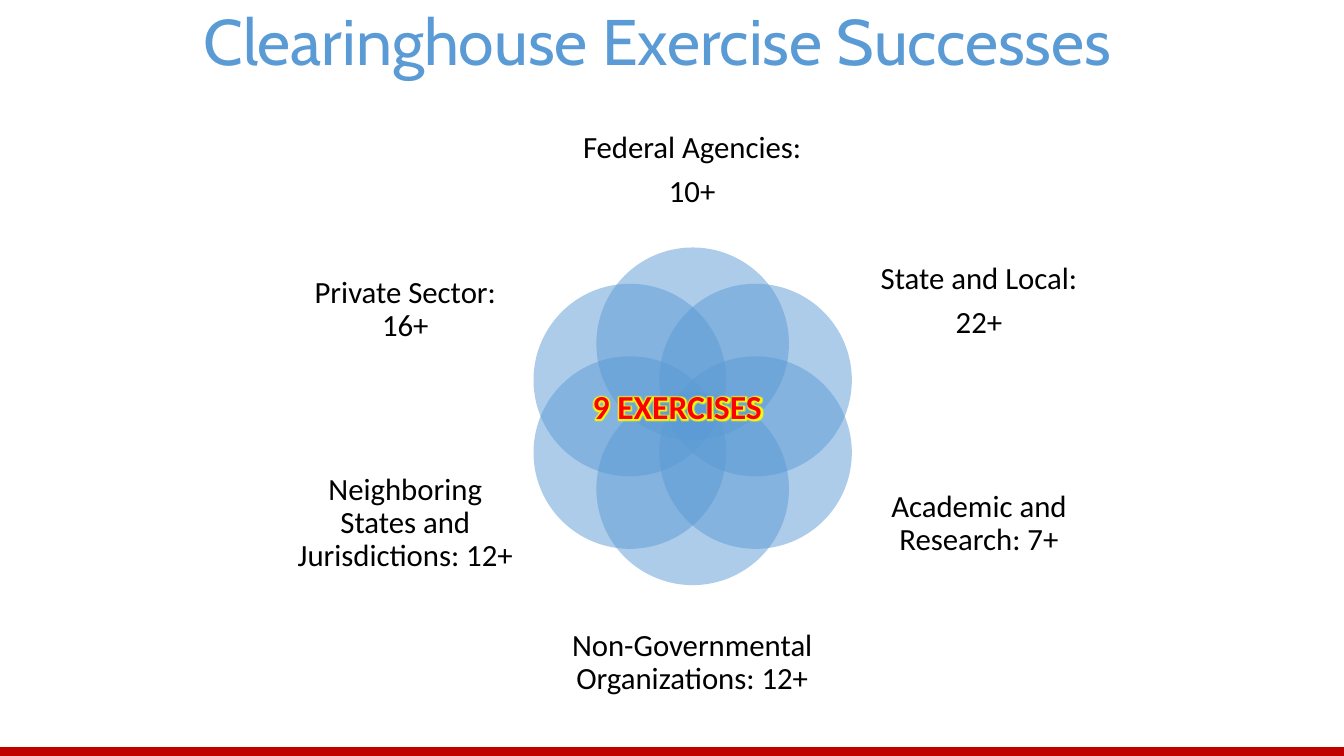
"""Build the Clearinghouse Exercise Successes slide."""
from math import cos, radians, sin

from lxml import etree
from pptx import Presentation
from pptx.dml.color import RGBColor
from pptx.enum.shapes import MSO_SHAPE as Shape
from pptx.enum.text import MSO_ANCHOR as Anchor, PP_ALIGN as Align
from pptx.oxml.ns import qn
from pptx.util import Inches, Pt

COLORS = {"blue": "5B9BD5", "red": "C00000", "bright": "FF0000",
          "glow": "FFFF00", "black": "000000"}
TITLE = "Clearinghouse Exercise Successes"
CENTER_TEXT = "9 EXERCISES"
PETALS = [
    (["Federal Agencies:", "10+"], (5.67, 1.04, 2.39, 1.3)),
    (["State and Local:", "22+"], (8.58, 2.28, 2.26, 1.42)),
    (["Academic and Research: 7+"], (8.58, 4.4, 2.26, 1.59)),
    (["Non-Governmental Organizations: 12+"], (5.67, 5.93, 2.39, 1.3)),
    (["Neighboring States and Jurisdictions: 12+"], (2.89, 4.4, 2.26, 1.59)),
    (["Private Sector: 16+"], (2.89, 2.28, 2.26, 1.59)),
]
CENTER_X, CENTER_Y = 6.87, 4.13
ORBIT, DIAMETER = 0.72, 1.91


def rgb(name):
    return RGBColor.from_string(COLORS[name])


def add_filled(page, kind, place, color):
    shape = page.shapes.add_shape(kind, *map(Inches, place))
    shape.shadow.inherit = False
    shape.fill.solid()
    shape.fill.fore_color.rgb = rgb(color)
    return shape


def add_petal(page, angle):
    left = CENTER_X + ORBIT * cos(angle) - DIAMETER / 2
    top = CENTER_Y + ORBIT * sin(angle) - DIAMETER / 2
    circle = add_filled(page, Shape.OVAL, (left, top, DIAMETER, DIAMETER), "blue")
    circle.line.fill.background()
    fill_color = circle.fill._xPr.find(qn("a:solidFill"))[0]
    etree.SubElement(fill_color, qn("a:alpha"), val="50000")


def add_text(page, lines, place, size, color, font="Calibri", align=Align.CENTER,
             anchor=Anchor.MIDDLE, margins=(0, 0), spacing=None, after=None, bold=False):
    box = page.shapes.add_textbox(*map(Inches, place))
    frame = box.text_frame
    frame.word_wrap = True
    frame.vertical_anchor = anchor
    frame.margin_left = frame.margin_right = Inches(margins[0])
    frame.margin_top = frame.margin_bottom = Inches(margins[1])
    for index, line in enumerate(lines):
        para = frame.add_paragraph() if index else frame.paragraphs[0]
        para.alignment = align
        para.line_spacing = spacing
        para.space_after = after
        span = para.add_run()
        span.text = line
        span.font.name = font
        span.font.size = Pt(size)
        span.font.bold = bold
        span.font.color.rgb = rgb(color)
    return box


def add_glow(box):
    props = box.text_frame.paragraphs[0].runs[0].font._element
    effects = etree.Element(qn("a:effectLst"))
    glow = etree.SubElement(effects, qn("a:glow"), rad=str(Pt(5)))
    etree.SubElement(glow, qn("a:srgbClr"), val=COLORS["glow"])
    props.find(qn("a:solidFill")).addnext(effects)


def main():
    deck = Presentation()
    deck.slide_width, deck.slide_height = Inches(13.33), Inches(7.5)
    page = deck.slides.add_slide(deck.slide_layouts[6])

    footer = add_filled(page, Shape.RECTANGLE, (0, 7.42, 13.33, 0.08), "red")
    footer.line.color.rgb = rgb("red")
    footer.line.width = Pt(1)

    for index, (lines, place) in enumerate(PETALS):
        add_petal(page, radians(360 / len(PETALS) * index - 90))
        add_text(page, lines, place, 22, "black", spacing=0.9, after=Pt(8))

    add_text(page, [TITLE], (0, -0.26, 13.04, 1.09), 46, "blue", font="Cabin",
             anchor=Anchor.BOTTOM, margins=(0.1, 0.05))
    caption = add_text(page, [CENTER_TEXT], (5.78, 3.78, 2.78, 0.5), 24, "bright",
                       align=Align.LEFT, anchor=Anchor.TOP, margins=(0.1, 0.05), bold=True)
    add_glow(caption)
    deck.save("out.pptx")


if __name__ == "__main__":
    main()
